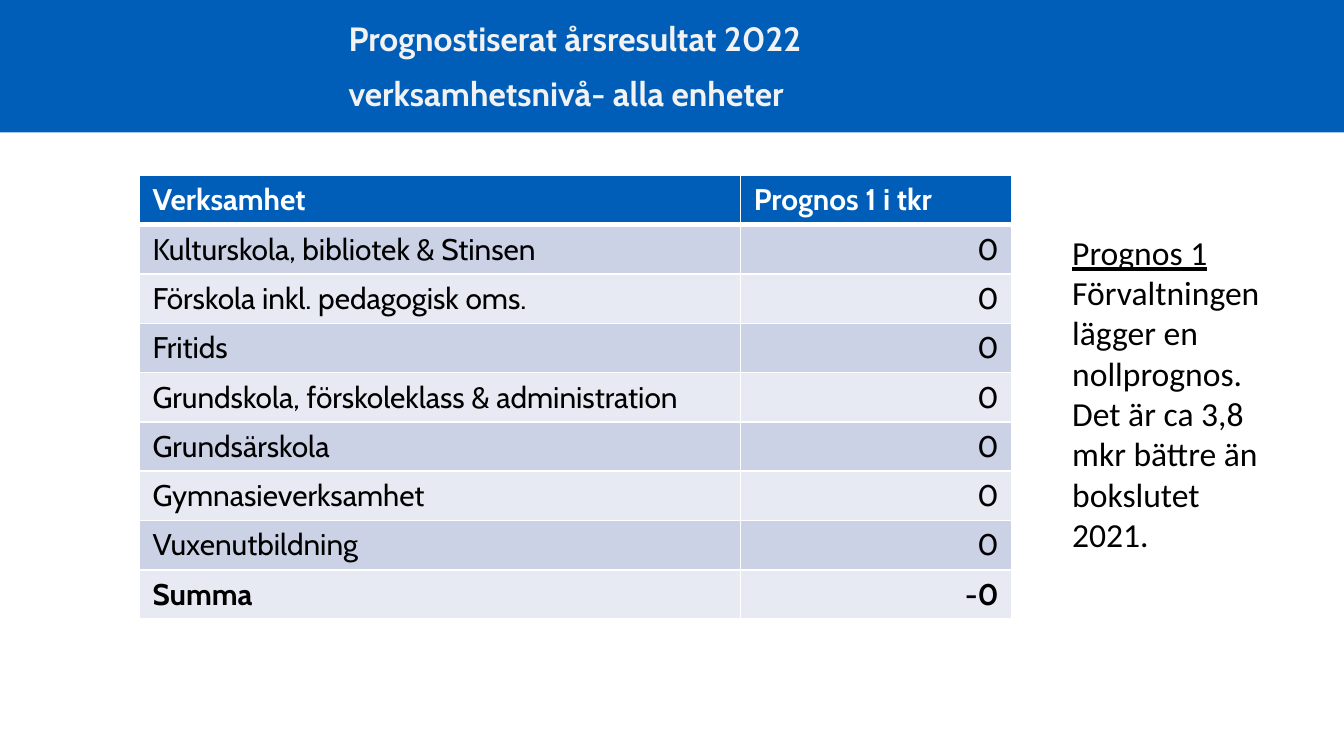
from lxml.etree import SubElement
from pptx import Presentation
from pptx.dml.color import RGBColor
from pptx.enum.shapes import MSO_SHAPE
from pptx.enum.text import PP_ALIGN
from pptx.oxml.ns import qn
from pptx.util import Emu, Pt

PX = 4572  # 200 px to the inch
BLUE, WHITE, BLACK = "005EB8", "FFFFFF", "000000"
BANDS = ["CCD2E6", "E7EAF3"]
ROWS = [
    ("Verksamhet", "Prognos 1 i tkr"),
    ("Kulturskola, bibliotek & Stinsen", "0"),
    ("Förskola inkl. pedagogisk oms.", "0"),
    ("Fritids", "0"),
    ("Grundskola, förskoleklass & administration", "0"),
    ("Grundsärskola", "0"),
    ("Gymnasieverksamhet", "0"),
    ("Vuxenutbildning", "0"),
    ("Summa", "-0"),
]


def px(n):
    return Emu(n * PX)


def color(code):
    return RGBColor.from_string(code)


def style(para, font, size, code, bold=False):
    for run in para.runs:
        run.font.name = font
        run.font.size = Pt(size)
        run.font.color.rgb = color(code)
        run.font.bold = bold


def add_band(slide, *box):
    band = slide.shapes.add_shape(MSO_SHAPE.RECTANGLE, *map(px, box))
    band.shadow.inherit = False
    band.fill.solid()
    band.fill.fore_color.rgb = color(BLUE)
    band.line.fill.background()


def add_text(slide, box, lines, font, code, bold=False):
    frame = slide.shapes.add_textbox(*map(px, box)).text_frame
    frame.word_wrap = True
    frame.text = "\n".join(lines)
    for para in frame.paragraphs:
        style(para, font, 18, code, bold)
    return frame.paragraphs


def add_edges(cell, base):
    props = cell._tc.get_or_add_tcPr()
    # Borders come before the fill in the cell properties
    for i, (side, wide) in enumerate([("L", 1), ("R", 1), ("T", 1), ("B", base)]):
        edge = SubElement(props, qn(f"a:ln{side}"), w=str(Pt(wide)))
        fill = SubElement(edge, qn("a:solidFill"))
        SubElement(fill, qn("a:srgbClr"), val=WHITE)
        props.insert(i, edge)


def add_grid(slide, left, top, widths, row_high, high):
    size = (left, top, sum(widths), high)
    frame = slide.shapes.add_table(len(ROWS), len(widths), *map(px, size))
    table = frame.table
    for col, wide in zip(table.columns, widths):
        col.width = px(wide)
    for row in table.rows:
        row.height = px(row_high)
    frame.height = px(high)
    for r, row in enumerate(ROWS):
        head, total = r == 0, r == len(ROWS) - 1
        for c, text in enumerate(row):
            cell = table.cell(r, c)
            cell.text = text
            cell.fill.solid()
            cell.fill.fore_color.rgb = color(BLUE if head else BANDS[(r - 1) % 2])
            para = cell.text_frame.paragraphs[0]
            style(para, "Cabin", 16, WHITE if head else BLACK, head or total)
            if c and not head:
                para.alignment = PP_ALIGN.RIGHT
            add_edges(cell, 3 if head else 1)


def main():
    deck = Presentation()
    deck.slide_width, deck.slide_height = px(2000), px(1125)
    slide = deck.slides.add_slide(deck.slide_layouts[6])

    # Header
    add_band(slide, 0, 0, 2000, 197)
    title = add_text(
        slide, (499, 24, 1036, 180),
        ["Prognostiserat årsresultat 2022", "verksamhetsnivå- alla enheter"],
        "Cabin", "F2F2F2", True)
    for para in title:
        para.line_spacing = 0.9
    title[1].space_before = Pt(10)

    # Forecast table
    add_grid(slide, 207, 261, [895, 404], 68, 660)

    # Comment
    note = add_text(
        slide, (1576, 335, 352, 504),
        ["Prognos 1", "Förvaltningen lägger en nollprognos.",
         "Det är ca 3,8 mkr bättre än bokslutet 2021."],
        "Calibri", BLACK)
    note[0].runs[0].font.underline = True

    deck.save("out.pptx")


if __name__ == "__main__":
    main()
